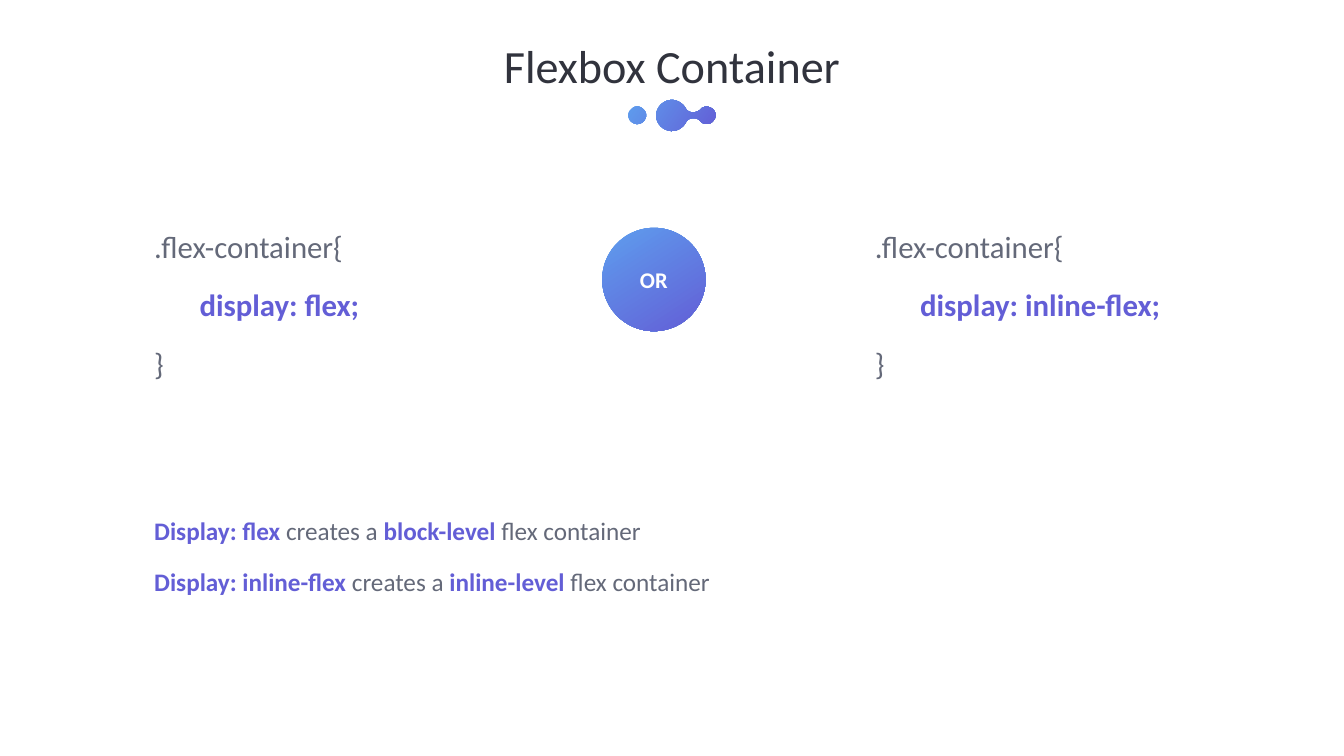
from lxml import etree
from pptx import Presentation
from pptx import util as u
from pptx.dml.color import RGBColor
from pptx.enum import shapes, text
from pptx.oxml.ns import qn

PX = 9144  # EMU per px, 100 px to the inch
FONT = "Calibri"
COLORS = {"title": "31333D", "body": "646979", "accent": "635ED6",
          "sky": "5E9EEE", "white": "FFFFFF"}
INSET = 6
TAB_STOP = 90

# Each outline: a start point, then cubic segments (control, control, end).
DROPLET = ((1334, 198), [
    ((1317, 198), (1302, 212), (1302, 229)),
    ((1302, 246), (1316, 259), (1332, 260)),
    ((1344, 260), (1355, 254), (1361, 243)),
    ((1363, 239), (1367, 236), (1371, 235)),
    ((1378, 233), (1385, 235), (1389, 240)),
    ((1400, 252), (1419, 245), (1420, 229)),
    ((1420, 213), (1399, 205), (1389, 218)),
    ((1385, 221), (1380, 223), (1375, 223)),
    ((1369, 223), (1363, 220), (1360, 214)),
    ((1355, 205), (1345, 199), (1334, 198)),
])
DOT = ((1264, 211), [
    ((1260, 211), (1256, 213), (1252, 217)),
    ((1245, 223), (1245, 234), (1252, 241)),
    ((1259, 248), (1270, 248), (1277, 241)),
    ((1284, 234), (1284, 223), (1277, 217)),
    ((1273, 213), (1269, 211), (1264, 211)),
])


def px(*lengths):
    return [u.Emu(length * PX) for length in lengths]


def style_run(run, size, color, bold=False):
    run.font.name = FONT
    run.font.size = u.Pt(size)
    run.font.bold = bold
    run.font.color.rgb = RGBColor.from_string(COLORS[color])


def set_insets(frame, inset):
    frame.margin_left = frame.margin_top = u.Emu(inset * PX)
    frame.margin_right = frame.margin_bottom = u.Emu(inset * PX)


def fill_gradient(shape, clockwise_angle):
    shape.shadow.inherit = False
    shape.line.fill.background()
    shape.fill.gradient()
    shape.fill.gradient_angle = 360 - clockwise_angle
    for stop, color in zip(shape.fill.gradient_stops, ("sky", "accent")):
        stop.color.rgb = RGBColor.from_string(COLORS[color])


def add_text(slide, box, size, lines):
    """Add a text box; each line is a list of (words, colour, bold)."""
    frame = slide.shapes.add_textbox(*px(*box)).text_frame
    frame.word_wrap = True
    frame.auto_size = text.MSO_AUTO_SIZE.SHAPE_TO_FIT_TEXT
    set_insets(frame, INSET)
    for index, line in enumerate(lines):
        paragraph = frame.paragraphs[0] if index == 0 else frame.add_paragraph()
        for words, color, bold in line:
            run = paragraph.add_run()
            run.text = words
            style_run(run, size, color, bold)
    return frame


def space_lines(frame):
    for paragraph in frame.paragraphs:
        paragraph.line_spacing = 1.2
        paragraph.space_before = u.Pt(20)


def add_title(slide, words):
    frame = add_text(slide, (835, 68, 997, 122), 66, [[(words, "title", False)]])
    frame.vertical_anchor = text.MSO_ANCHOR.MIDDLE
    frame.paragraphs[0].alignment = text.PP_ALIGN.CENTER


def add_code(slide, left, declaration):
    frame = add_text(slide, (left, 431, 633, 334), 44, [
        [(".flex-container{", "body", False)],
        [("\t", "body", False), (declaration, "accent", True)],
        [("}", "body", False)],
    ])
    space_lines(frame)
    properties = frame.paragraphs[1]._p.get_or_add_pPr()
    stops = etree.SubElement(properties, qn("a:tabLst"))
    etree.SubElement(stops, qn("a:tab"), pos=str(TAB_STOP * PX), algn="l")


def add_notes_on_display(slide, pairs):
    frame = add_text(slide, (300, 1005, 2063, 184), 36, [
        [(f"Display: {value}", "accent", True), (" creates a ", "body", False),
         (f"{level}-level", "accent", True), (" flex container", "body", False)]
        for value, level in pairs
    ])
    space_lines(frame)


def curve_points(start, segments, steps=8):
    """Sample joined cubic curves as points in EMU."""
    points = []
    for first, second, end in segments:
        for step in range(1, steps + 1):
            t = step / steps
            s = 1 - t
            points.append(tuple(
                round(PX * (s**3 * a + 3 * s * s * t * b + 3 * s * t * t * c + t**3 * d))
                for a, b, c, d in zip(start, first, second, end)))
        start = end
    return points


def add_ornament(slide, outlines):
    builder = None
    for start, segments in outlines:
        origin = px(*start)
        if builder is None:
            builder = slide.shapes.build_freeform(*origin)
        else:
            builder.move_to(*origin)
        builder.add_line_segments(curve_points(start, segments), close=True)
    fill_gradient(builder.convert_to_shape(), 34)


def add_badge(slide, words):
    badge = slide.shapes.add_shape(shapes.MSO_SHAPE.OVAL, *px(1195, 452, 205, 205))
    fill_gradient(badge, 57)
    frame = badge.text_frame
    set_insets(frame, 0)
    frame.vertical_anchor = text.MSO_ANCHOR.MIDDLE
    frame.text = words
    frame.paragraphs[0].alignment = text.PP_ALIGN.CENTER
    style_run(frame.paragraphs[0].runs[0], 32, "white", True)


def main():
    deck = Presentation()
    deck.slide_width, deck.slide_height = px(2667, 1500)
    slide = deck.slides.add_slide(deck.slide_layouts[6])
    add_title(slide, "Flexbox Container")
    add_ornament(slide, (DROPLET, DOT))
    add_code(slide, 300, "display: flex;")
    add_code(slide, 1730, "display: inline-flex;")
    add_badge(slide, "OR")
    add_notes_on_display(slide, [("flex", "block"), ("inline-flex", "inline")])
    deck.save("out.pptx")


if __name__ == "__main__":
    main()
